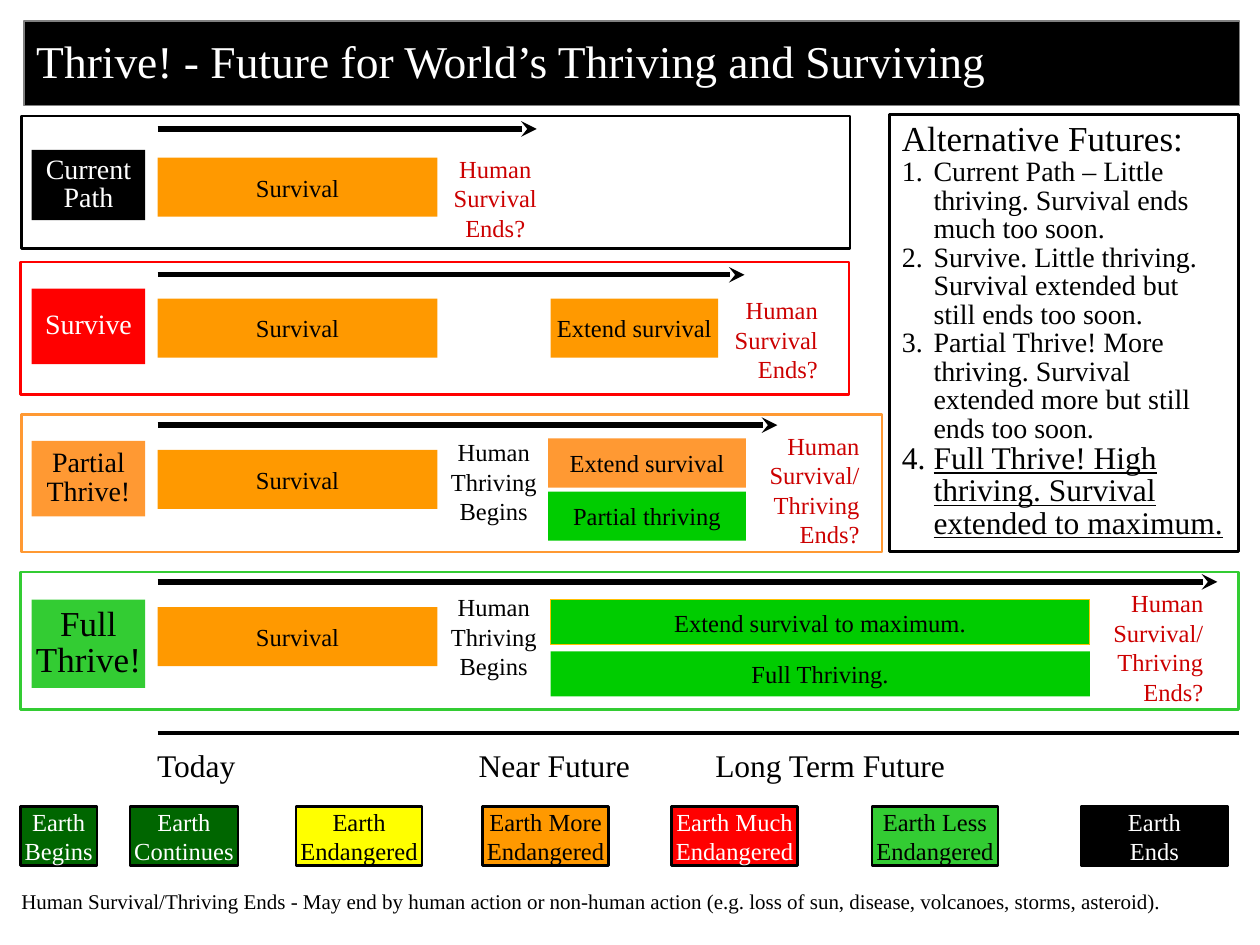
from dataclasses import dataclass
from typing import NamedTuple, Optional

from lxml import etree
from pptx import Presentation
from pptx.dml.color import RGBColor
from pptx.enum.shapes import MSO_CONNECTOR, MSO_SHAPE
from pptx.enum.text import MSO_ANCHOR, MSO_AUTO_SIZE, PP_ALIGN
from pptx.oxml.ns import qn
from pptx.util import Cm, Pt

RECT = MSO_SHAPE.RECTANGLE
STRAIGHT = MSO_CONNECTOR.STRAIGHT
TOP, MIDDLE = MSO_ANCHOR.TOP, MSO_ANCHOR.MIDDLE
LEFT, CENTER, RIGHT = PP_ALIGN.LEFT, PP_ALIGN.CENTER, PP_ALIGN.RIGHT
NO_FIT = MSO_AUTO_SIZE.NONE


@dataclass(frozen=True)
class Theme:
    font: str = "Times New Roman"
    black: str = "000000"
    white: str = "FFFFFF"
    gray: str = "808080"
    red: str = "FF0000"
    crimson: str = "CC0000"
    orange: str = "FF9900"
    peach: str = "FF9933"
    gold: str = "FFC000"
    yellow: str = "FFFF00"
    lime: str = "33CC33"
    green: str = "00CC00"
    forest: str = "006600"
    title: float = 26
    head: float = 20
    large: float = 18
    tag: float = 16
    body: float = 14
    small: float = 12


T = Theme()


class Box(NamedTuple):
    x: float
    y: float
    w: float
    h: float


class Style(NamedTuple):
    size: float = T.body
    color: str = T.black
    align: PP_ALIGN = CENTER
    anchor: MSO_ANCHOR = MIDDLE
    pad: tuple = (0.05, 0.13)
    wrap: bool = True
    space: Optional[float] = None
    under: bool = False


class Bar(NamedTuple):
    box: Box
    text: str
    fill: str
    edge: Optional[str] = None


class Note(NamedTuple):
    box: Box
    text: str
    color: str = T.crimson
    align: PP_ALIGN = RIGHT


@dataclass(frozen=True)
class Lane:
    frame: Box
    hue: str
    tag: str
    tag_y: float
    tag_h: float
    ink: str
    size: float
    bar_y: float
    flow_y: float
    flow_end: float
    bars: tuple
    notes: tuple


class Chip(NamedTuple):
    x: float
    w: float
    text: str
    fill: str
    ink: str


BEGINS = "Human\nThriving\nBegins"
ENDS = "Human\nSurvival/\nThriving Ends?"

LANES = (
    Lane(Box(0.43, 2.34, 16.71, 2.67), T.black, "Current\nPath", 3.02, 1.42,
         T.white, T.tag, 3.18, 2.6, 10.82, (),
         (Note(Box(8.79, 2.97, 2.39, 2.06), "Human\nSurvival Ends?", align=CENTER),)),
    Lane(Box(0.41, 5.28, 16.71, 2.67), T.red, "Survive", 5.82, 1.52,
         T.white, T.tag, 6.02, 5.54, 15.01,
         (Bar(Box(11.1, 6.02, 3.38, 1.19), "Extend survival", T.orange),),
         (Note(Box(14.53, 5.82, 2.21, 2.06), "Human\nSurvival\nEnds?"),)),
    Lane(Box(0.43, 8.36, 17.35, 2.77), T.peach, "Partial\nThrive!", 8.89, 1.52,
         T.black, T.tag, 9.07, 8.57, 15.67,
         (Bar(Box(11.05, 8.84, 3.99, 0.99), "Extend survival", T.peach),
          Bar(Box(11.05, 9.91, 3.99, 0.99), "Partial thriving", T.green)),
         (Note(Box(8.81, 8.69, 2.29, 2.06), BEGINS, T.black, CENTER),
          Note(Box(15.24, 8.56, 2.34, 2.64), ENDS))),
    Lane(Box(0.41, 11.53, 24.56, 2.77), T.lime, "Full\nThrive!", 12.09, 1.78,
         T.black, T.head, 12.24, 11.73, 24.54,
         (Bar(Box(11.1, 12.09, 10.87, 0.91), "Extend survival to maximum.", T.green, T.gold),
          Bar(Box(11.1, 13.13, 10.87, 0.91), "Full Thriving.", T.green)),
         (Note(Box(8.81, 11.81, 2.29, 2.06), BEGINS, T.black, CENTER),
          Note(Box(22.02, 11.73, 2.49, 2.64), ENDS))),
)

CHIPS = (
    Chip(0.41, 1.55, "Earth\nBegins", T.forest, T.white),
    Chip(2.62, 2.18, "Earth\nContinues", T.forest, T.white),
    Chip(5.97, 2.54, "Earth\nEndangered", T.yellow, T.black),
    Chip(9.73, 2.54, "Earth More\nEndangered", T.orange, T.black),
    Chip(13.54, 2.54, "Earth Much\nEndangered", T.red, T.white),
    Chip(17.58, 2.54, "Earth Less\nEndangered", T.lime, T.black),
    Chip(21.79, 2.97, "Earth\nEnds", T.black, T.white),
)

FUTURES = (
    "Current Path – Little thriving. Survival ends much too soon.",
    "Survive. Little thriving. Survival extended but still ends too soon.",
    "Partial Thrive! More thriving. Survival extended more but still ends too soon.",
    "Full Thrive! High thriving. Survival extended to maximum.",
)


def set_font(par, style: Style) -> None:
    par.alignment = style.align
    if style.space:
        par.line_spacing = style.space
    font = par.font
    font.name = T.font
    font.size = Pt(style.size)
    font.color.rgb = RGBColor.from_string(style.color)
    if style.under:
        font.underline = True


def set_frame(shape, style: Style):
    frame = shape.text_frame
    frame.auto_size = NO_FIT
    frame.word_wrap = style.wrap
    frame.vertical_anchor = style.anchor
    frame.margin_left = frame.margin_right = Cm(style.pad[0])
    frame.margin_top = frame.margin_bottom = Cm(style.pad[1])
    return frame


def write(shape, text: str, style: Style) -> None:
    frame = set_frame(shape, style)
    frame.text = text
    for par in frame.paragraphs:
        set_font(par, style)


def paint(shape, fill: Optional[str], edge: Optional[str], width: float) -> None:
    if fill:
        shape.fill.solid()
        shape.fill.fore_color.rgb = RGBColor.from_string(fill)
    else:
        shape.fill.background()
    if edge:
        shape.line.color.rgb = RGBColor.from_string(edge)
        shape.line.width = Pt(width)
    else:
        shape.line.fill.background()


def add_rect(slide, box: Box, fill: Optional[str] = None,
             edge: Optional[str] = None, width: float = 1.5):
    shape = slide.shapes.add_shape(RECT, *map(Cm, box))
    shape.shadow.inherit = False
    paint(shape, fill, edge, width)
    return shape


def add_text(slide, box: Box, text: str, style: Style):
    shape = slide.shapes.add_textbox(*map(Cm, box))
    write(shape, text, style)
    return shape


def add_line(slide, y: float, end: float, width: float, arrow: bool) -> None:
    line = slide.shapes.add_connector(STRAIGHT, Cm(3.18), Cm(y), Cm(end), Cm(y))
    line.line.color.rgb = RGBColor.from_string(T.black)
    line.line.width = Pt(width)
    if arrow:
        etree.SubElement(line.line._get_or_add_ln(), qn("a:tailEnd"), type="stealth")
    etree.SubElement(line._element.spPr, qn("a:effectLst"))


def add_lane(slide, lane: Lane) -> None:
    add_rect(slide, lane.frame, edge=lane.hue)
    tag = add_rect(slide, Box(0.64, lane.tag_y, 2.29, lane.tag_h), lane.hue)
    write(tag, lane.tag, Style(lane.size, lane.ink, wrap=False, space=0.85))
    start = Bar(Box(3.18, lane.bar_y, 5.64, 1.19), "Survival", T.orange)
    for bar in (start, *lane.bars):
        write(add_rect(slide, bar.box, bar.fill, bar.edge, 0.75), bar.text, Style())
    for note in lane.notes:
        add_text(slide, note.box, note.text,
                 Style(color=note.color, align=note.align, anchor=TOP, pad=(0.25, 0.13)))
    add_line(slide, lane.flow_y, lane.flow_end, 3, True)


def add_panel(slide) -> None:
    panel = add_rect(slide, Box(17.93, 2.31, 7.04, 8.81), edge=T.black, width=2)
    head = Style(T.head, align=LEFT, anchor=TOP, pad=(0.25, 0.13), space=0.9)
    write(panel, "Alternative Futures:", head)
    for text in FUTURES:
        last = text == FUTURES[-1]
        par = panel.text_frame.add_paragraph()
        par.text = text
        props = par._p.get_or_add_pPr()
        props.set("marL", str(Cm(0.64)))
        props.set("indent", str(-Cm(0.64)))
        etree.SubElement(props, qn("a:buFont"), typeface="+mj-lt")
        etree.SubElement(props, qn("a:buAutoNum"), type="arabicPeriod")
        set_font(par, Style(T.large if last else T.tag, align=LEFT, space=0.85, under=last))


def add_times(slide) -> None:
    add_line(slide, 14.78, 24.97, 2.25, False)
    style = Style(T.large, align=LEFT, anchor=TOP, pad=(0.25, 0.13))
    box = slide.shapes.add_textbox(*map(Cm, Box(2.92, 14.91, 22.28, 1.02)))
    par = set_frame(box, style).paragraphs[0]
    par.text = "Today\tNear Future\tLong Term Future"
    tabs = etree.SubElement(par._p.get_or_add_pPr(), qn("a:tabLst"))
    for stop in (6.48, 11.25):
        etree.SubElement(tabs, qn("a:tab"), pos=str(Cm(stop)), algn="l")
    set_font(par, style)


def main() -> None:
    deck = Presentation()
    deck.slide_width, deck.slide_height = Cm(25.4), Cm(19.05)
    slide = deck.slides.add_slide(deck.slide_layouts[5])
    title = slide.shapes.title
    title.left, title.top, title.width, title.height = map(Cm, Box(0.48, 0.43, 24.51, 1.7))
    paint(title, T.black, T.gray, 1)
    write(title, "Thrive! - Future for World’s Thriving and Surviving",
          Style(T.title, T.white, LEFT, pad=(0.25, 0.13), space=0.9))
    for lane in LANES:
        add_lane(slide, lane)
    add_panel(slide)
    add_times(slide)
    for chip in CHIPS:
        shape = add_rect(slide, Box(chip.x, 16.26, chip.w, 1.19), chip.fill, T.black)
        write(shape, chip.text, Style(color=chip.ink, anchor=TOP, pad=(0.08, 0), wrap=False))
    add_text(slide, Box(0.43, 17.91, 23.27, 0.51),
             "Human Survival/Thriving Ends - May end by human action or non-human action "
             "(e.g. loss of sun, disease, volcanoes, storms, asteroid).",
             Style(T.small, align=LEFT, anchor=TOP, pad=(0, 0), wrap=False))
    deck.save("out.pptx")


if __name__ == "__main__":
    main()
